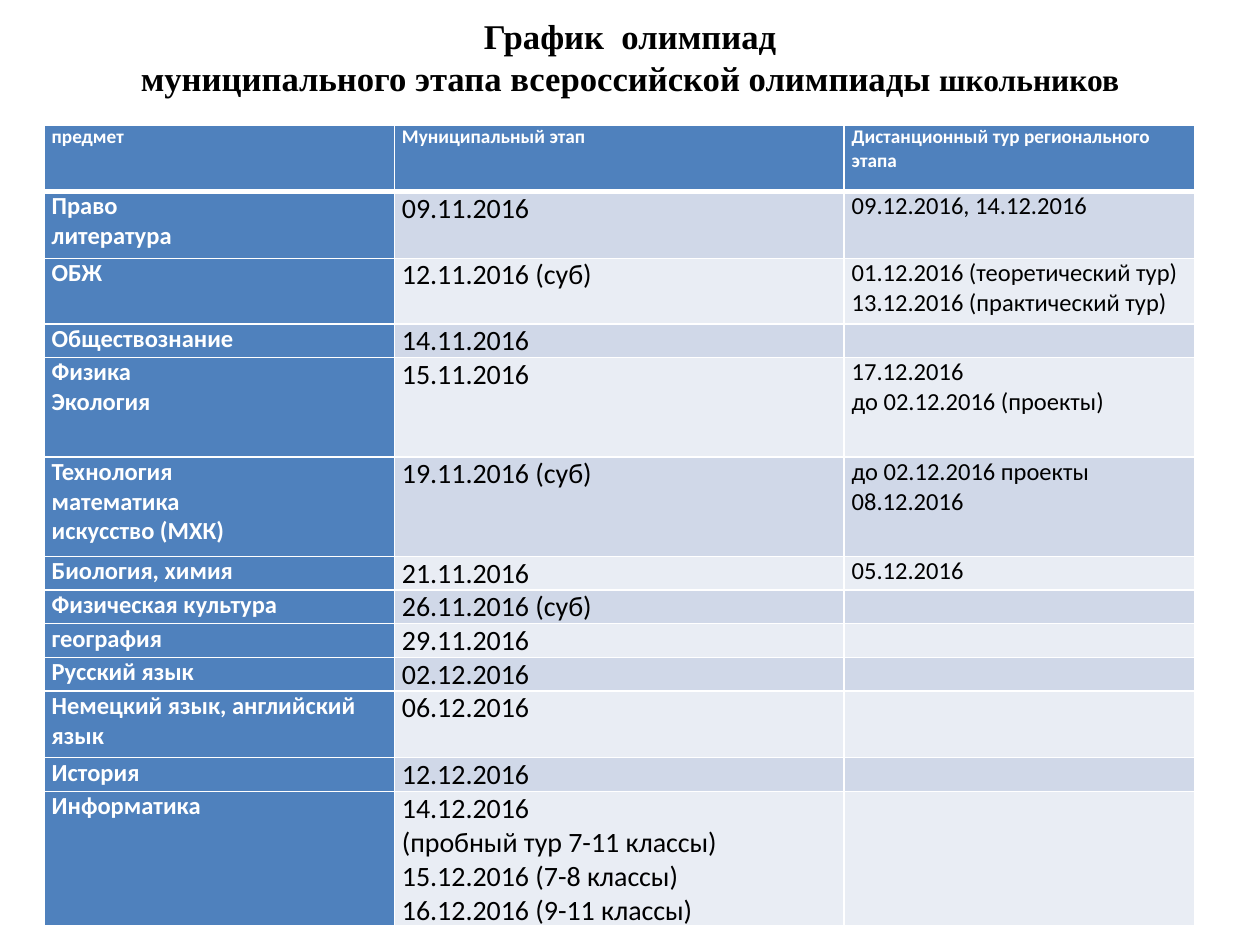
from lxml.etree import SubElement
from pptx import Presentation
from pptx.dml.color import RGBColor
from pptx.enum.text import MSO_ANCHOR, PP_ALIGN
from pptx.oxml.ns import qn
from pptx.util import Inches, Pt

COLORS = {"white": "FFFFFF", "black": "000000", "blue": "4F81BD",
          "band_dark": "D0D8E8", "band_light": "E9EDF4"}
COLUMN_WIDTHS = [2.78, 3.57, 2.78]
HEADINGS = ["предмет", "Муниципальный этап", "Дистанционный тур регионального этапа"]
HEADING_HEIGHT = 0.53
SCHEDULE = [
    (0.53, "Право\nлитература", "09.11.2016", "09.12.2016, 14.12.2016"),
    (0.52, "ОБЖ", "12.11.2016 (суб)",
     "01.12.2016 (теоретический тур)\n13.12.2016 (практический тур)"),
    (0.26, "Обществознание", "14.11.2016", ""),
    (0.79, "Физика\nЭкология", "15.11.2016", "17.12.2016\nдо 02.12.2016 (проекты)"),
    (0.79, "Технология\nматематика\nискусство (МХК)", "19.11.2016 (суб)",
     "до 02.12.2016 проекты\n08.12.2016"),
    (0.26, "Биология, химия", "21.11.2016", "05.12.2016"),
    (0.26, "Физическая культура", "26.11.2016 (суб)", ""),
    (0.26, "география", "29.11.2016", ""),
    (0.26, "Русский язык", "02.12.2016", ""),
    (0.53, "Немецкий язык, английский язык", "06.12.2016", ""),
    (0.26, "История", "12.12.2016", ""),
    (1.05, "Информатика",
     "14.12.2016\n(пробный тур 7-11 классы)\n15.12.2016 (7-8 классы)\n16.12.2016 (9-11 классы)", ""),
]


def add_run(paragraph, text, size, color, bold=False, font="Calibri"):
    run = paragraph.add_run()
    run.text = text
    run.font.name = font
    run.font.size = Pt(size)
    run.font.bold = bold
    run.font.color.rgb = RGBColor.from_string(COLORS[color])


def add_title(slide):
    title = slide.shapes.add_textbox(Inches(0.5), Inches(0.21), Inches(9), Inches(0.47))
    frame = title.text_frame
    frame.word_wrap = True
    frame.vertical_anchor = MSO_ANCHOR.MIDDLE
    heading = frame.paragraphs[0]
    heading.alignment = PP_ALIGN.CENTER
    heading.line_spacing = Pt(24)
    style = {"color": "black", "bold": True, "font": "Times New Roman"}
    add_run(heading, "График  олимпиад", 19.8, **style)
    heading.add_line_break()
    add_run(heading, "муниципального этапа всероссийской олимпиады ", 19.8, **style)
    add_run(heading, "школьников", 18, **style)


def set_borders(cell, top=1, bottom=1):
    properties = cell._tc.get_or_add_tcPr()
    for side, width in (("L", 1), ("R", 1), ("T", top), ("B", bottom)):
        line = SubElement(properties, qn(f"a:ln{side}"), w=str(Pt(width)))
        fill = SubElement(line, qn("a:solidFill"))
        SubElement(fill, qn("a:srgbClr"), val=COLORS["white"])


def fill_cell(cell, text, size, color, fill, bold=False, top=1, bottom=1):
    cell.margin_left = cell.margin_right = Inches(0.06)
    cell.margin_top = cell.margin_bottom = 0
    set_borders(cell, top, bottom)
    cell.fill.solid()
    cell.fill.fore_color.rgb = RGBColor.from_string(COLORS[fill])
    frame = cell.text_frame
    for index, line in enumerate(text.split("\n")):
        paragraph = frame.add_paragraph() if index else frame.paragraphs[0]
        if line:
            add_run(paragraph, line, size, color, bold)
        else:
            SubElement(paragraph._p, qn("a:endParaRPr"), sz=str(size * 100))


def add_schedule(slide):
    heights = [HEADING_HEIGHT] + [row[0] for row in SCHEDULE]
    table = slide.shapes.add_table(
        len(heights), len(COLUMN_WIDTHS), Inches(0.35), Inches(0.99),
        Inches(sum(COLUMN_WIDTHS)), Inches(sum(heights))).table
    table.horz_banding = False
    for column, width in zip(table.columns, COLUMN_WIDTHS):
        column.width = Inches(width)
    for row, height in zip(table.rows, heights):
        row.height = Inches(height)
    for column, heading in enumerate(HEADINGS):
        fill_cell(table.cell(0, column), heading, 11, "white", "blue", bold=True, bottom=3)
    for row, (_, subject, municipal, regional) in enumerate(SCHEDULE, start=1):
        band = "band_dark" if row % 2 else "band_light"
        top = 3 if row == 1 else 1
        fill_cell(table.cell(row, 0), subject, 14, "white", "blue", bold=True, top=top)
        fill_cell(table.cell(row, 1), municipal, 16, "black", band, top=top)
        fill_cell(table.cell(row, 2), regional, 14, "black", band, top=top)


def main():
    """Build the slide with the olympiad schedule."""
    deck = Presentation()
    deck.slide_width, deck.slide_height = Inches(10), Inches(7.5)
    slide = deck.slides.add_slide(deck.slide_layouts[6])
    add_title(slide)
    add_schedule(slide)
    deck.save("out.pptx")


if __name__ == "__main__":
    main()
